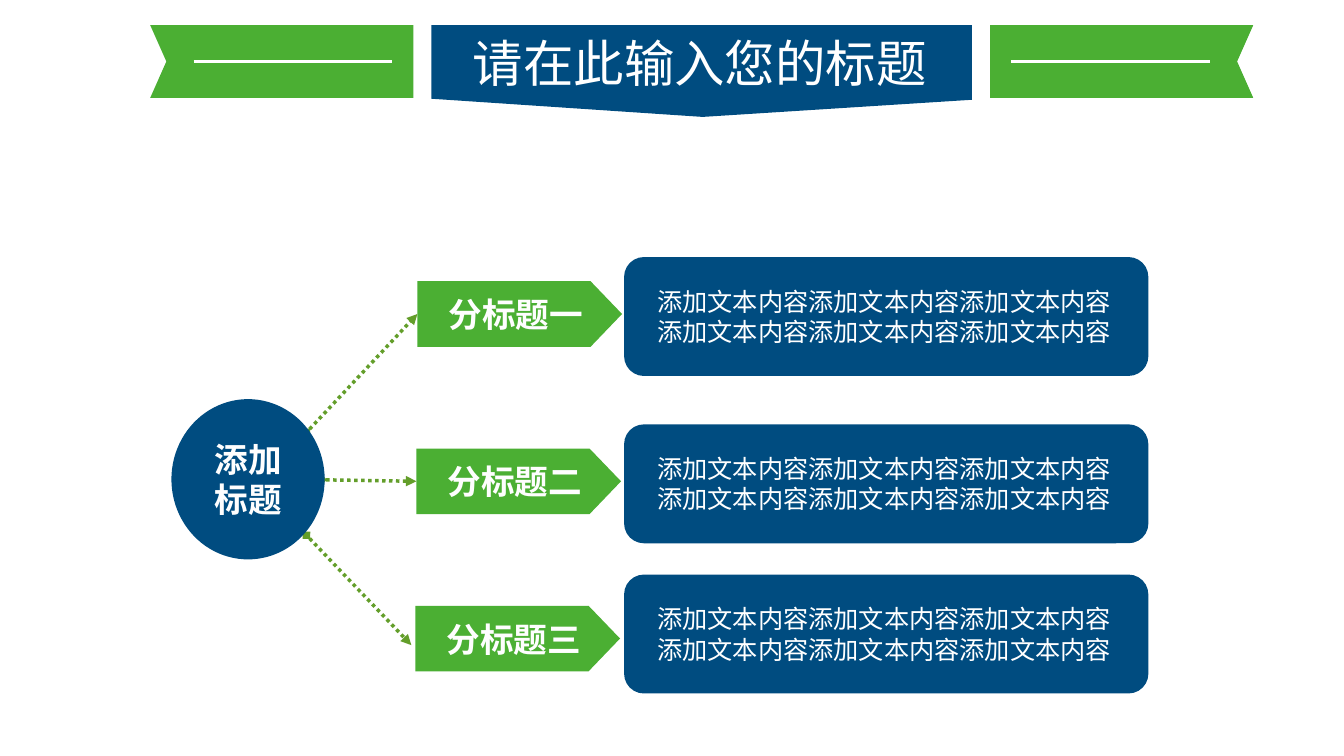
from lxml.etree import SubElement
from pptx import Presentation
from pptx.dml.color import RGBColor
from pptx.enum.dml import MSO_LINE
from pptx.enum.shapes import MSO_CONNECTOR, MSO_SHAPE
from pptx.enum.text import MSO_ANCHOR, PP_ALIGN
from pptx.oxml.ns import qn
from pptx.util import Inches, Pt

BLUE = RGBColor(0x00, 0x4C, 0x80)
GREEN = RGBColor(0x4B, 0xAF, 0x33)
ARROW_GREEN = RGBColor(0x63, 0x9E, 0x2A)
WHITE = RGBColor(0xFF, 0xFF, 0xFF)
OFF_WHITE = RGBColor(0xFE, 0xFE, 0xFE)
CJK_FONT = "Noto Sans CJK SC"

# Content
TITLE = "请在此输入您的标题"
HUB = "添加\n标题"
BODY = "\n".join(["添加文本内容" * 3] * 2)
# label, label left, label top, card top, arrow start, arrow end, joined to label
BRANCHES = [
    ("分标题一", 4.14, 2.79, 2.55, (3.04, 4.29), (4.14, 3.10), True),
    ("分标题二", 4.13, 4.45, 4.21, (3.19, 4.76), (4.14, 4.76), True),
    ("分标题三", 4.12, 6.01, 5.70, (3.04, 5.31), (4.08, 6.40), False),
]
BANNER = [(4.28, 0.25), (9.64, 0.25), (9.64, 0.99), (6.97, 1.16), (4.28, 0.98)]
# inner edge, outer edge, notch, and the two ends of the white rule
RIBBONS = [
    (4.10, 1.49, 1.65, 1.92, 3.89),
    (9.82, 12.43, 12.27, 10.03, 12.00),
]
RIBBON_TOP, RIBBON_MIDDLE, RIBBON_BOTTOM = 0.25, 0.61, 0.97


def paint(shape, color):
    shape.fill.solid()
    shape.fill.fore_color.rgb = color
    shape.line.fill.background()
    shape.shadow.inherit = False
    return shape


def add_outline(points, color):
    corners = [(Inches(x), Inches(y)) for x, y in points]
    builder = slide.shapes.build_freeform(*corners[0], scale=1.0)
    builder.add_line_segments(corners[1:], close=True)
    return paint(builder.convert_to_shape(), color)


def add_preset(preset, left, top, width, height, color):
    box = map(Inches, (left, top, width, height))
    return paint(slide.shapes.add_shape(preset, *box), color)


def add_line(start, end, color, width):
    line = slide.shapes.add_connector(
        MSO_CONNECTOR.STRAIGHT, *map(Inches, start + end))
    line.line.color.rgb = color
    line.line.width = Pt(width)
    SubElement(line.element.spPr, qn("a:effectLst"))
    return line


def write(shape, text, size, color, font="Calibri", bold=False,
          align=PP_ALIGN.LEFT, anchor=MSO_ANCHOR.TOP, wrap=True):
    frame = shape.text_frame
    frame.text = text
    frame.word_wrap = wrap
    frame.vertical_anchor = anchor
    for paragraph in frame.paragraphs:
        paragraph.alignment = align
        for run in paragraph.runs:
            run.font.size = Pt(size)
            run.font.bold = bold
            run.font.color.rgb = color
            run.font.name = font
            properties = run.font._element
            SubElement(properties, qn("a:ea")).set("typeface", CJK_FONT)


presentation = Presentation()
presentation.slide_width = Inches(13.33)
presentation.slide_height = Inches(7.5)
slide = presentation.slides.add_slide(presentation.slide_layouts[5])

# Title on its banner
banner = add_outline(BANNER, BLUE)
title = slide.shapes.title
title.left, title.top = Inches(4.59), Inches(0.27)
title.width, title.height = Inches(4.75), Inches(0.71)
write(title, TITLE, 36, WHITE, font=CJK_FONT, wrap=False)
banner.element.addnext(title.element)

# Side ribbons
for inner, outer, notch, rule_start, rule_end in RIBBONS:
    add_outline([(inner, RIBBON_TOP), (outer, RIBBON_TOP),
                 (notch, RIBBON_MIDDLE), (outer, RIBBON_BOTTOM),
                 (inner, RIBBON_BOTTOM)], GREEN)
    add_line((rule_start, RIBBON_MIDDLE), (rule_end, RIBBON_MIDDLE), WHITE, 1.75)

# Branches: label, dotted arrow, card and its text
for name, left, top, card_top, start, end, joined in BRANCHES:
    label = add_preset(MSO_SHAPE.PENTAGON, left, top, 2.03, 0.65, GREEN)
    label.adjustments[0] = 0.48
    label.text_frame.margin_left = Inches(0.18)
    write(label, name, 24, OFF_WHITE, bold=True,
          align=PP_ALIGN.CENTER, anchor=MSO_ANCHOR.MIDDLE)

    arrow = add_line(start, end, ARROW_GREEN, 2.5)
    arrow.line.dash_style = MSO_LINE.ROUND_DOT
    outline = arrow.line._get_or_add_ln()
    SubElement(outline, qn("a:headEnd")).set("type", "diamond")
    SubElement(outline, qn("a:tailEnd")).set("type", "triangle")
    if joined:
        arrow.end_connect(label, 1)

    card = add_preset(MSO_SHAPE.ROUNDED_RECTANGLE, 6.19, card_top, 5.2, 1.18, BLUE)
    card.adjustments[0] = 0.167
    text_box = slide.shapes.add_textbox(
        *map(Inches, (6.42, card_top + 0.24, 4.72, 0.7)))
    write(text_box, BODY, 18, WHITE)

# Hub circle over the arrow starts
hub = add_preset(MSO_SHAPE.OVAL, 1.7, 3.96, 1.52, 1.59, BLUE)
write(hub, HUB, 24, OFF_WHITE, bold=True,
      align=PP_ALIGN.CENTER, anchor=MSO_ANCHOR.MIDDLE)

presentation.save("out.pptx")
